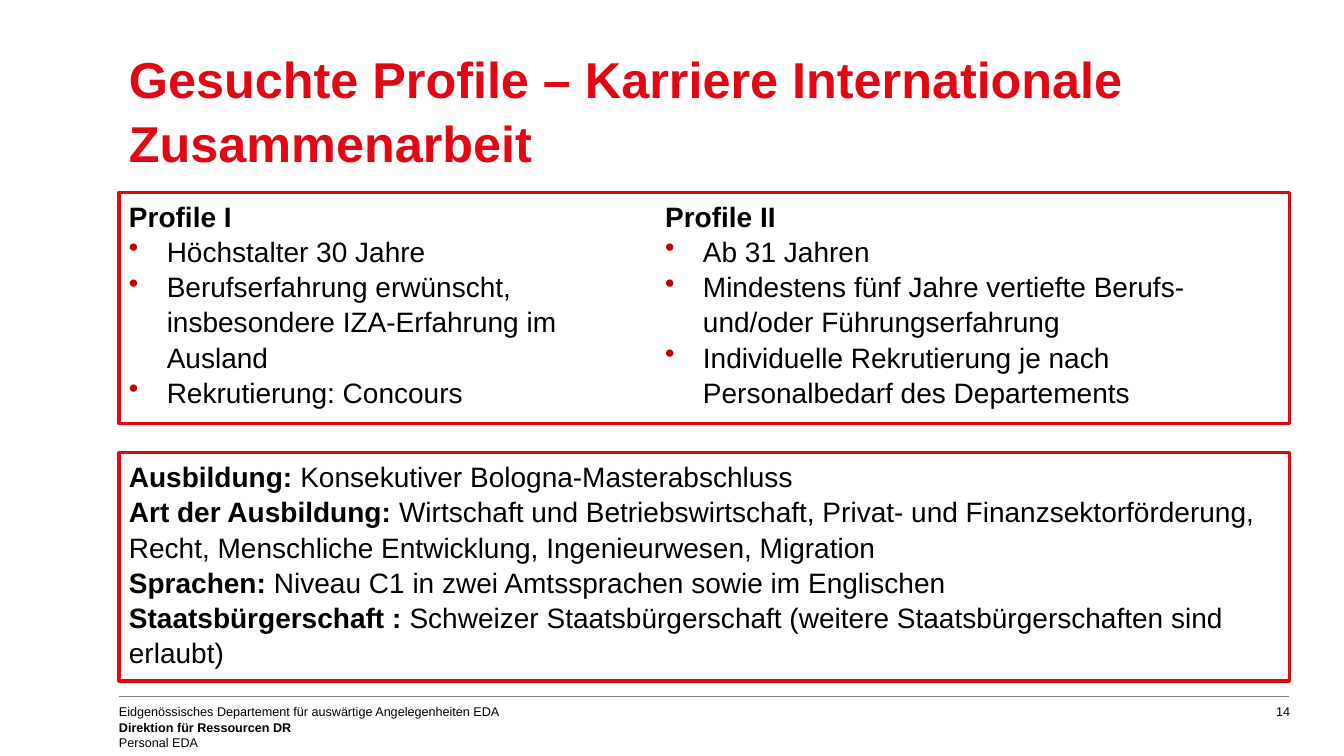
from lxml import etree
from pptx import Presentation
from pptx.dml import color
from pptx.enum import shapes, text
from pptx.oxml import ns
from pptx.util import Pt

RED, BULLET_RED, GREY, BLACK = "E30613", "C00000", "808080", "000000"
LEFT, WIDTH = 85, 836
COLUMN_TOP = 137.5

PROFILES = [
    (LEFT, 383, "Profile I", [
        "Höchstalter 30 Jahre",
        "Berufserfahrung erwünscht, insbesondere IZA-Erfahrung im Ausland",
        "Rekrutierung: Concours"]),
    (LEFT + 383, 453, "Profile II", [
        "Ab 31 Jahren",
        "Mindestens fünf Jahre vertiefte Berufs- und/oder Führungserfahrung",
        "Individuelle Rekrutierung je nach Personalbedarf des Departements"]),
]
REQUIREMENTS = [
    ("Ausbildung: ", "Konsekutiver Bologna-Masterabschluss"),
    ("Art der Ausbildung: ", "Wirtschaft und Betriebswirtschaft, Privat- und "
     "Finanzsektorförderung, Recht, Menschliche Entwicklung, Ingenieurwesen, Migration"),
    ("Sprachen: ", "Niveau C1 in zwei Amtssprachen sowie im Englischen"),
    ("Staatsbürgerschaft : ", "Schweizer Staatsbürgerschaft "
     "(weitere Staatsbürgerschaften sind erlaubt)"),
]
FOOTER = [
    ("", "Eidgenössisches Departement für auswärtige Angelegenheiten EDA"),
    ("Direktion für Ressourcen DR", ""),
    ("", "Personal EDA"),
]


def rgb(value):
    return color.RGBColor.from_string(value)


def add_bullet(p):
    pPr = p._p.get_or_add_pPr()
    pPr.set("marL", str(Pt(27)))
    pPr.set("indent", str(Pt(-27)))
    clr = etree.SubElement(pPr, ns.qn("a:buClr"))
    etree.SubElement(clr, ns.qn("a:srgbClr"), val=BULLET_RED)
    etree.SubElement(pPr, ns.qn("a:buChar"), char="•")


def write(tf, lines, size, fill=BLACK, bullets=False, align=text.PP_ALIGN.LEFT):
    """Each line is a pair: bold part, regular part; bullets mark all but the first."""
    tf.word_wrap = True
    tf.vertical_anchor = text.MSO_ANCHOR.TOP
    for i, parts in enumerate(lines):
        p = tf.paragraphs[0] if i == 0 else tf.add_paragraph()
        p.alignment = align
        p.line_spacing = 1.05
        if bullets and i:
            add_bullet(p)
        for part, bold in zip(parts, (True, False)):
            if part:
                r = p.add_run()
                r.text = part
                r.font.name, r.font.size, r.font.bold = "Arial", Pt(size), bold
                r.font.color.rgb = rgb(fill)


def add_text(s, left, top, width, height, lines, size, inset=True, **style):
    sp = s.shapes.add_textbox(Pt(left), Pt(top), Pt(width), Pt(height))
    tf = sp.text_frame
    if not inset:
        tf.margin_left = tf.margin_right = tf.margin_top = tf.margin_bottom = 0
    write(tf, lines, size, **style)


def add_frame(s, top, height):
    sp = s.shapes.add_shape(shapes.MSO_SHAPE.RECTANGLE,
                            Pt(LEFT), Pt(top), Pt(WIDTH), Pt(height))
    sp.shadow.inherit = False
    sp.fill.background()
    sp.line.color.rgb = rgb(RED)
    sp.line.width = Pt(2.25)
    return sp


def add_rule(s, y):
    line = s.shapes.add_connector(shapes.MSO_CONNECTOR.STRAIGHT,
                                  Pt(LEFT), Pt(y), Pt(LEFT + WIDTH), Pt(y))
    line.line.color.rgb = rgb(GREY)
    line.line.width = Pt(0.75)
    etree.SubElement(line._element.spPr, ns.qn("a:effectLst"))


def main():
    prs = Presentation()
    prs.slide_width, prs.slide_height = Pt(960), Pt(540)
    s = prs.slides.add_slide(prs.slide_layouts[6])

    # Footer
    add_text(s, LEFT, 502, WIDTH, 38, FOOTER, 9, inset=False)
    add_rule(s, 497.5)
    add_text(s, 893, 502, 28.5, 11, [("", "14")], 9, inset=False,
             align=text.PP_ALIGN.RIGHT)

    # Title
    add_text(s, LEFT, 29, WIDTH, 78,
             [("Gesuchte Profile – Karriere Internationale Zusammenarbeit", "")],
             36, fill=RED)

    # Requirements
    write(add_frame(s, 323.5, 163).text_frame, REQUIREMENTS, 20)

    # Profiles side by side in one frame
    for left, width, heading, points in PROFILES:
        lines = [(heading, "")] + [("", point) for point in points]
        add_text(s, left, COLUMN_TOP, width, 152.5, lines, 20, bullets=True)
    add_frame(s, COLUMN_TOP, 165)

    prs.save("out.pptx")


if __name__ == "__main__":
    main()
